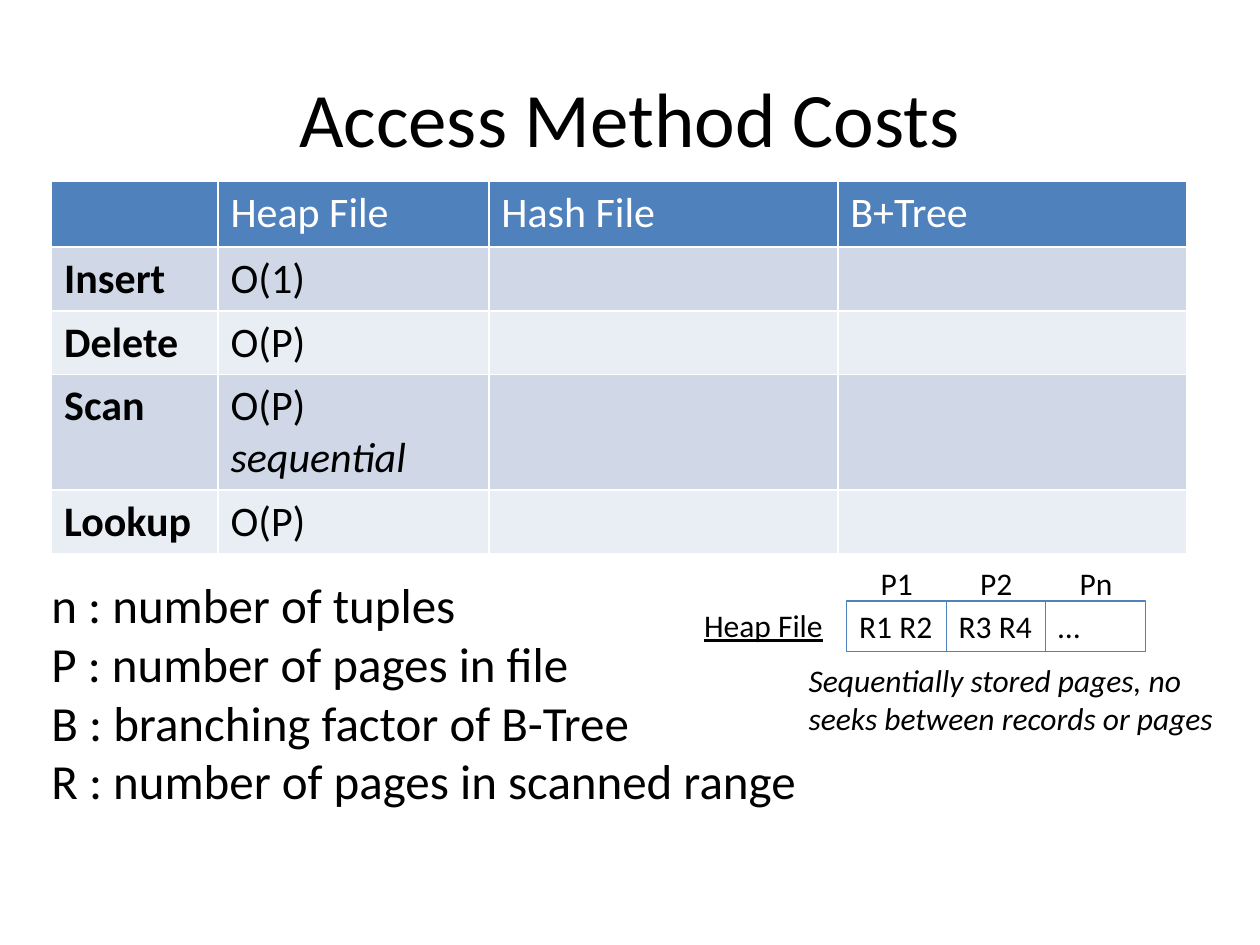
import pptx
import pptx.util
from pptx.dml.color import RGBColor
from pptx.enum.shapes import MSO_SHAPE
from pptx.enum.text import MSO_ANCHOR, PP_ALIGN

BLACK = RGBColor(0x00, 0x00, 0x00)
WHITE = RGBColor(0xFF, 0xFF, 0xFF)
BLUE = RGBColor(0x4F, 0x81, 0xBD)
BANDS = RGBColor(0xD0, 0xD8, 0xE8), RGBColor(0xE9, 0xED, 0xF4)
FONT = "Calibri"

COLUMN_WIDTHS = 1.32, 2.15, 2.77, 2.77
ROW_HEIGHTS = 0.52, 0.41, 0.41, 0.41, 0.41
HEADINGS = "", "Heap File", "Hash File", "B+Tree"
HEAP_COSTS = [
    ("Insert", ["O(1)"]),
    ("Delete", ["O(P)"]),
    ("Scan", ["O(P) ", "sequential"]),
    ("Lookup", ["O(P)"]),
]
SYMBOLS = [
    "n : number of tuples",
    "P : number of pages in file",
    "B : branching factor of B-Tree",
    "R : number of pages in scanned range",
]
HEAP_PAGES = [("P1", "R1 R2"), ("P2", "R3 R4"), ("Pn", "…")]


def inches(*lengths):
    return [pptx.util.Inches(length) for length in lengths]


def add_span(para, text, size, color=BLACK, bold=False, italic=False, underline=False):
    span = para.add_run()
    span.text = text
    font = span.font
    font.name, font.size, font.color.rgb = FONT, pptx.util.Pt(size), color
    font.bold, font.italic, font.underline = bold, italic, underline


def add_text(page, box, lines, size, **style):
    frame = page.shapes.add_textbox(*inches(*box)).text_frame
    frame.word_wrap = True
    for index, line in enumerate(lines):
        para = frame.add_paragraph() if index else frame.paragraphs[0]
        add_span(para, line, size, **style)


def place_title(page, box):
    title = page.shapes.title
    title.left, title.top, title.width, title.height = inches(*box)
    title.text_frame.vertical_anchor = MSO_ANCHOR.MIDDLE
    para = title.text_frame.paragraphs[0]
    para.alignment = PP_ALIGN.CENTER
    add_span(para, "Access Method Costs", 44)


def add_cost_table(page, box):
    table = page.shapes.add_table(
        len(ROW_HEIGHTS), len(COLUMN_WIDTHS), *inches(*box)
    ).table
    for column, width in zip(table.columns, inches(*COLUMN_WIDTHS)):
        column.width = width
    for number, (row, height) in enumerate(zip(table.rows, inches(*ROW_HEIGHTS))):
        row.height = height
        for cell in row.cells:
            cell.fill.solid()
            cell.fill.fore_color.rgb = BANDS[(number - 1) % 2] if number else BLUE

    def cell_para(row, column):
        return table.cell(row, column).text_frame.paragraphs[0]

    for column, heading in enumerate(HEADINGS):
        if heading:
            add_span(cell_para(0, column), heading, 24, WHITE)
    for row, (operation, costs) in enumerate(HEAP_COSTS, 1):
        add_span(cell_para(row, 0), operation, 24, bold=True)
        for index, cost in enumerate(costs):
            add_span(cell_para(row, 1), cost, 24, italic=index > 0)


def add_heap_page(page, box, label, records):
    """One bordered page of the heap file, with its label above it."""
    left, top, width, height = box
    add_text(page, (left + 0.17, top - 0.34, 0.56, height), [label], 18)
    shape = page.shapes.add_shape(MSO_SHAPE.RECTANGLE, *inches(*box))
    shape.shadow.inherit = False
    shape.fill.background()
    shape.line.color.rgb = BLUE
    shape.line.width = pptx.util.Pt(0.75)
    frame = shape.text_frame
    frame.word_wrap = False
    frame.vertical_anchor = MSO_ANCHOR.TOP
    para = frame.paragraphs[0]
    para.alignment = PP_ALIGN.LEFT
    add_span(para, records, 18)


def add_heap_diagram(page, box):
    left, top, width, height = box
    row_height, page_width = 0.4, 0.79
    pages_left = left + 1.23
    add_text(page, (left, top - 0.01, 1.24, row_height), ["Heap File"], 18, underline=True)
    for index, (label, records) in enumerate(HEAP_PAGES):
        page_box = (pages_left + index * page_width, top, page_width, row_height)
        add_heap_page(page, page_box, label, records)
    note = "Sequentially stored pages, no seeks between records or pages"
    note_left, note_top = 0.83, 0.43
    note_box = (left + note_left, top + note_top, width - note_left, height - note_top)
    add_text(page, note_box, [note], 18, italic=True)


def main():
    deck = pptx.Presentation()
    deck.slide_width, deck.slide_height = inches(10, 7.5)
    page = deck.slides.add_slide(deck.slide_layouts[5])
    place_title(page, (0.5, 0.3, 9, 1.25))
    add_cost_table(page, (0.41, 1.44, sum(COLUMN_WIDTHS), sum(ROW_HEIGHTS)))
    add_text(page, (0.31, 4.51, 6.42, 1.99), SYMBOLS, 28)
    add_heap_diagram(page, (5.49, 4.77, 4.5, 1.14))
    deck.save("out.pptx")


if __name__ == "__main__":
    main()
